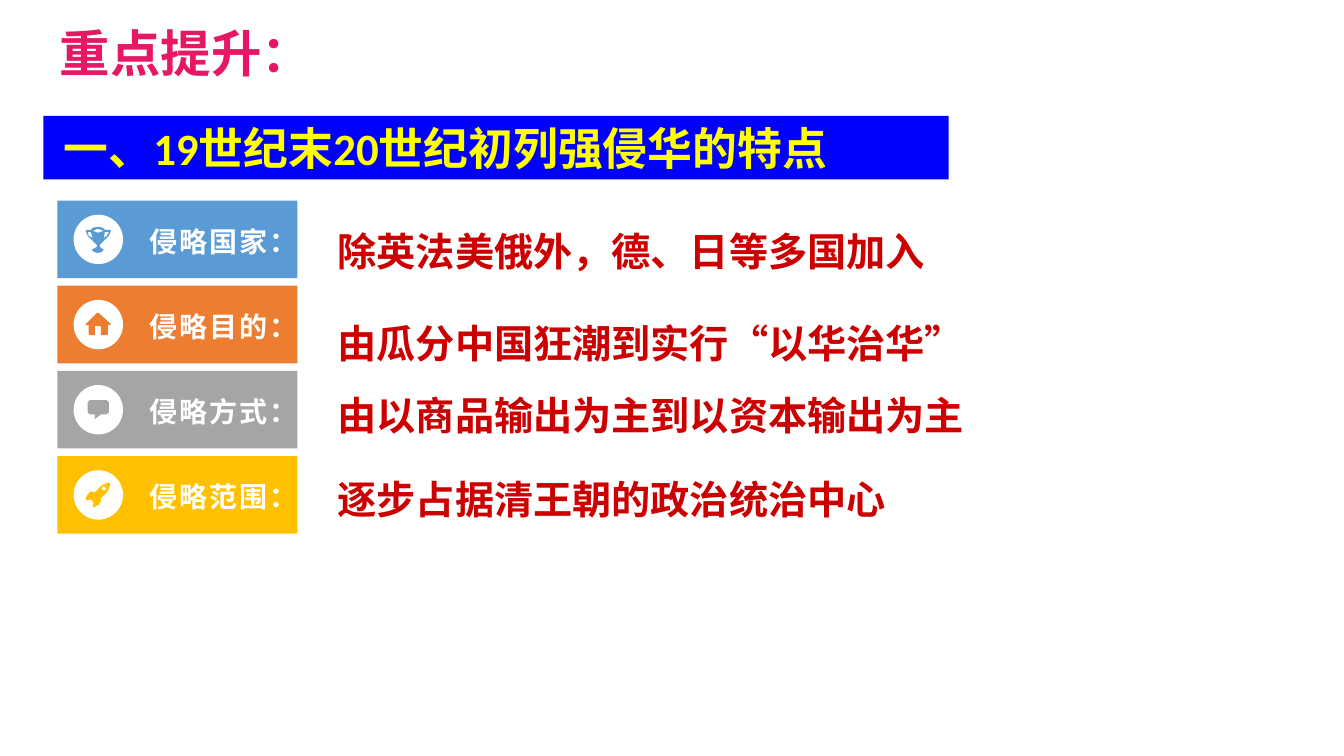
from pptx import Presentation
from pptx.dml.color import RGBColor
from pptx.enum.shapes import MSO_SHAPE
from pptx.enum.text import MSO_ANCHOR, PP_ALIGN
from pptx.oxml import parse_xml
from pptx.oxml.ns import nsdecls
from pptx.util import Inches, Pt

THEME = {
    "title": "E81766", "banner": "0000FF", "heading": "FFFF00",
    "answer": "CC0000", "white": "FFFFFF",
    "title_size": 36, "heading_size": 32, "answer_size": 28, "label_size": 20,
    "cjk": "Noto Sans CJK SC", "heading_font": "Calibri", "label_font": "Arial",
}
ROW_TOP, ROW_STEP, ROW_HEIGHT = 1.99, 0.845, 0.77
TILE_LEFT, TILE_WIDTH = 0.57, 2.38
DISC_LEFT, DISC_SIZE = 0.73, 0.49
LABEL_LEFT, LABEL_WIDTH, LABEL_HEIGHT = 1.38, 1.6, 0.46
ANSWER_LEFT, ANSWER_HEIGHT = 3.25, 0.62

# Icon outlines in hundredths of an inch from the corner of the disc.
TROPHY = [
    [(26, 30), (30, 26), (35, 21), (37, 16), (36, 15), (31, 15), (29, 13), (24, 12),
     (19, 13), (17, 15), (13, 15), (12, 16), (14, 21), (19, 26), (23, 30), (23, 32),
     (18, 35), (20, 37), (24, 37.5), (28, 37), (30, 35), (26, 32)],
    [(30, 23), (31, 17), (35, 17), (33, 21)],
    [(24, 14), (30, 16), (24, 18), (19, 16)],
    [(14, 17), (17, 17), (19, 23), (15, 21)],
]
HOUSE = [[(37, 24), (25, 13), (23, 13), (12, 24), (12, 25), (15, 25), (15, 34), (16, 35),
          (21, 35), (21, 26), (27, 26), (27, 35), (33, 35), (34, 34), (34, 25), (36, 25)]]
SPEECH = [[(16, 15), (33, 15), (35, 17), (35, 27), (33, 29), (27, 29), (21, 34),
           (21, 29), (16, 29), (14, 27), (14, 17)]]
ROCKET = [
    [(27, 28), (33, 22), (36, 16), (36, 13), (35, 12), (28, 15), (21, 22), (17, 21),
     (14, 24), (12, 28), (13, 30), (17, 29), (20, 32), (19, 35), (20, 37), (25, 34),
     (27, 31)],
    [(29, 20), (28, 18), (29, 16), (31, 16), (32, 18), (31, 20)],
]
ROWS = [
    ("侵略国家：", "5B9BD5", TROPHY, "除英法美俄外，德、日等多国加入", 2.15, 6.14),
    ("侵略目的：", "ED7D31", HOUSE, "由瓜分中国狂潮到实行“以华治华”", 3.07, 6.81),
    ("侵略方式：", "A5A5A5", SPEECH, "由以商品输出为主到以资本输出为主", 3.78, 7.09),
    ("侵略范围：", "FFC000", ROCKET, "逐步占据清王朝的政治统治中心", 4.62, 6.22),
]


def paint(shape, color):
    shape.shadow.inherit = False
    shape.fill.solid()
    shape.fill.fore_color.rgb = RGBColor.from_string(color)
    shape.line.fill.background()


def write(shape, text, size, color, font, insets=(0.1, 0.1), spacing=1.0, wrap=True):
    """Put one bold, vertically centred line in the shape; insets are left and right."""
    frame = shape.text_frame
    frame.word_wrap = wrap
    frame.vertical_anchor = MSO_ANCHOR.MIDDLE
    frame.margin_left, frame.margin_right = map(Inches, insets)
    frame.margin_top = frame.margin_bottom = 0
    para = frame.paragraphs[0]
    para.alignment = PP_ALIGN.LEFT if wrap else PP_ALIGN.CENTER
    para.line_spacing = spacing
    span = para.add_run()
    span.text = text
    span.font.size = Pt(size)
    span.font.bold = True
    span.font.name = font
    span.font.color.rgb = RGBColor.from_string(color)
    east_asian = parse_xml(f'<a:ea {nsdecls("a")} typeface="{THEME["cjk"]}"/>')
    span.font._element.append(east_asian)
    return span


deck = Presentation()
deck.slide_width, deck.slide_height = Inches(13.33), Inches(7.5)
page = deck.slides.add_slide(deck.slide_layouts[6])
shapes = page.shapes

title = shapes.add_textbox(*map(Inches, (0.36, 0.15, 2.47, 0.74)))
write(title, "重点提升：", THEME["title_size"], THEME["title"], THEME["cjk"], wrap=False)

banner = shapes.add_shape(MSO_SHAPE.RECTANGLE, *map(Inches, (0.43, 1.15, 8.98, 0.63)))
paint(banner, THEME["banner"])
write(banner, "一、19世纪末20世纪初列强侵华的特点", THEME["heading_size"],
      THEME["heading"], THEME["heading_font"], insets=(0.2, 0.1))

for index, (label, color, icon, answer, answer_top, answer_width) in enumerate(ROWS):
    top = ROW_TOP + index * ROW_STEP
    disc_top = top + (ROW_HEIGHT - DISC_SIZE) / 2

    tile = shapes.add_shape(MSO_SHAPE.RECTANGLE, Inches(TILE_LEFT), Inches(top),
                            Inches(TILE_WIDTH), Inches(ROW_HEIGHT))
    paint(tile, color)
    disc = shapes.add_shape(MSO_SHAPE.OVAL, Inches(DISC_LEFT), Inches(disc_top),
                            Inches(DISC_SIZE), Inches(DISC_SIZE))
    paint(disc, THEME["white"])

    outline = shapes.build_freeform(*icon[0][0], scale=Inches(0.01))
    outline.add_line_segments(icon[0][1:], close=True)
    for hole in icon[1:]:
        outline.move_to(*hole[0])
        outline.add_line_segments(hole[1:], close=True)
    paint(outline.convert_to_shape(Inches(DISC_LEFT), Inches(disc_top)), color)

    label_box = shapes.add_textbox(Inches(LABEL_LEFT), Inches(disc_top),
                                   Inches(LABEL_WIDTH), Inches(LABEL_HEIGHT))
    span = write(label_box, label, THEME["label_size"], THEME["white"],
                 THEME["label_font"], insets=(0.1, 0), spacing=1.2)
    span.font._element.set("spc", "150")

    answer_box = shapes.add_textbox(Inches(ANSWER_LEFT), Inches(answer_top),
                                    Inches(answer_width), Inches(ANSWER_HEIGHT))
    write(answer_box, answer, THEME["answer_size"], THEME["answer"], THEME["cjk"],
          spacing=1.1)

deck.save("out.pptx")
